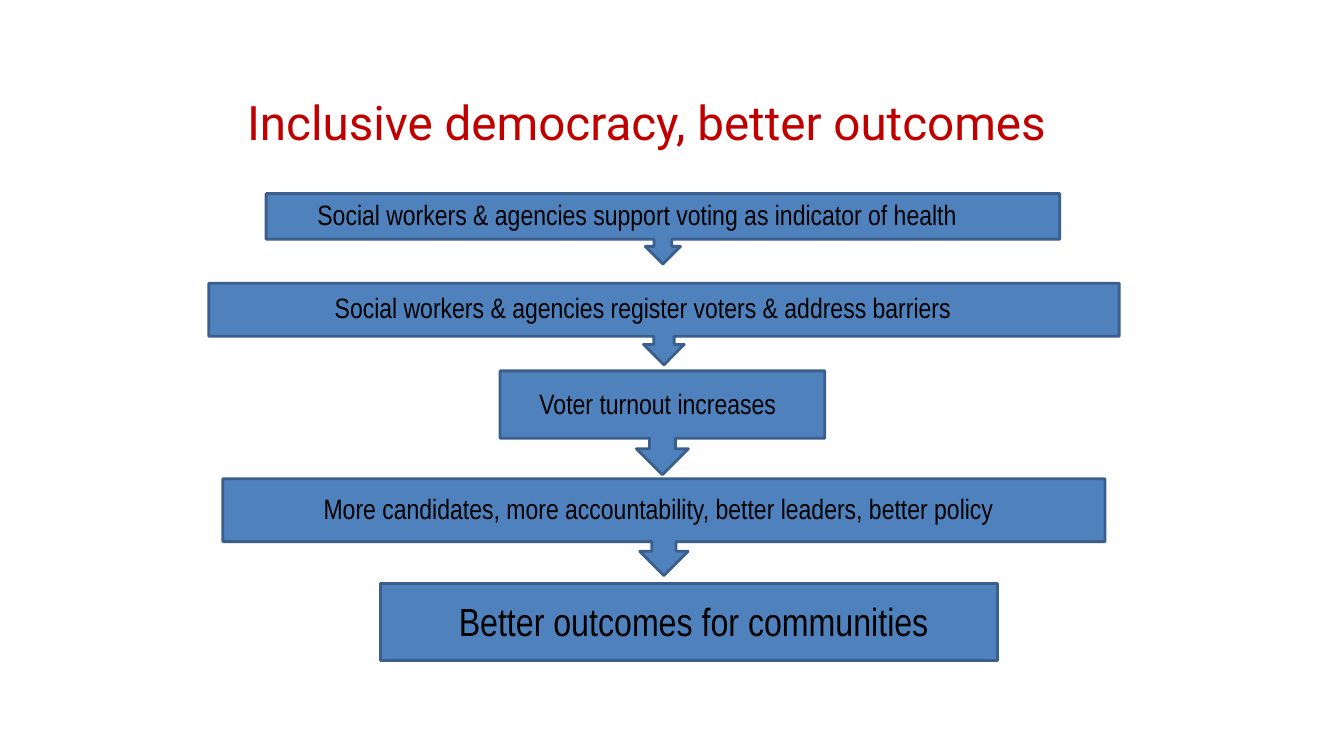
from dataclasses import dataclass

from pptx import Presentation
from pptx.dml.color import RGBColor
from pptx.enum.shapes import MSO_SHAPE
from pptx.enum.text import MSO_ANCHOR, MSO_AUTO_SIZE, PP_ALIGN
from pptx.util import Inches, Pt

CALLOUT = MSO_SHAPE.DOWN_ARROW_CALLOUT
PROCESS = MSO_SHAPE.FLOWCHART_PROCESS
TOP = MSO_ANCHOR.TOP
LEFT = PP_ALIGN.LEFT
NO_FIT = MSO_AUTO_SIZE.NONE
GROW = MSO_AUTO_SIZE.SHAPE_TO_FIT_TEXT
TITLE_ONLY = 5


@dataclass(frozen=True)
class Theme:
    background: RGBColor = RGBColor(0xFF, 0xFF, 0xFF)
    title_color: RGBColor = RGBColor(0xC0, 0x00, 0x00)
    text_color: RGBColor = RGBColor(0x00, 0x00, 0x00)
    fill: RGBColor = RGBColor(0x4F, 0x81, 0xBD)
    line: RGBColor = RGBColor(0x3A, 0x5F, 0x8C)
    line_width: float = 2
    title_font: str = "Roboto"
    body_font: str = "Arial Narrow"
    title_size: int = 34
    step_size: int = 20
    outcome_size: int = 28


def write_text(frame, text, *, font, size, color, fit=NO_FIT, left_inset=0.1):
    frame.word_wrap = True
    frame.auto_size = fit
    frame.vertical_anchor = TOP
    frame.margin_left = Inches(left_inset)
    paragraph = frame.paragraphs[0]
    paragraph.alignment = LEFT
    run = paragraph.add_run()
    run.text = text
    run.font.name = font
    run.font.size = Pt(size)
    run.font.color.rgb = color


class SlideBuilder:
    def __init__(self, slide, theme):
        self.slide = slide
        self.theme = theme
        slide.background.fill.solid()
        slide.background.fill.fore_color.rgb = theme.background

    def title(self, text, box):
        shape = self.slide.shapes.title
        shape.left, shape.top, shape.width, shape.height = map(Inches, box)
        write_text(shape.text_frame, text, font=self.theme.title_font,
                   size=self.theme.title_size, color=self.theme.title_color)

    def block(self, kind, box):
        shape = self.slide.shapes.add_shape(kind, *map(Inches, box))
        shape.shadow.inherit = False
        shape.fill.solid()
        shape.fill.fore_color.rgb = self.theme.fill
        shape.line.color.rgb = self.theme.line
        shape.line.width = Pt(self.theme.line_width)

    def label(self, text, box, size, left_inset):
        shape = self.slide.shapes.add_textbox(*map(Inches, box))
        write_text(shape.text_frame, text, font=self.theme.body_font, size=size,
                   color=self.theme.text_color, fit=GROW, left_inset=left_inset)


def main():
    presentation = Presentation()
    presentation.slide_width = Inches(13.33)
    presentation.slide_height = Inches(7.5)
    slide = presentation.slides.add_slide(presentation.slide_layouts[TITLE_ONLY])
    theme = Theme()
    builder = SlideBuilder(slide, theme)
    builder.title("Inclusive democracy, better outcomes", (2.35, 0.87, 10.7, 0.87))

    # Each step: kind, block box, text, label box, text size, left inset
    step, outcome = theme.step_size, theme.outcome_size
    steps = [
        (CALLOUT, (2.64, 1.92, 7.87, 0.7),
         "Social workers & agencies support voting as indicator of health",
         (3.05, 1.91, 8.63, 0.44), step, 0.1),
        (CALLOUT, (2.07, 2.81, 9.03, 0.81),
         "Social workers & agencies register voters & address barriers",
         (3.16, 2.83, 9.88, 0.44), step, 0.16),
        (CALLOUT, (4.96, 3.68, 3.22, 1.03),
         "Voter turnout increases",
         (5.19, 3.79, 2.91, 0.44), step, 0.16),
        (CALLOUT, (2.21, 4.75, 8.75, 0.96),
         "More candidates, more accountability, better leaders, better policy",
         (3.05, 4.83, 8.76, 0.44), step, 0.16),
        (PROCESS, (3.77, 5.79, 6.12, 0.76),
         "Better outcomes for communities",
         (4.39, 5.88, 6.12, 0.57), outcome, 0.16),
    ]
    for kind, block_box, text, label_box, size, left_inset in steps:
        builder.block(kind, block_box)
        builder.label(text, label_box, size, left_inset)

    presentation.save("out.pptx")


if __name__ == "__main__":
    main()
